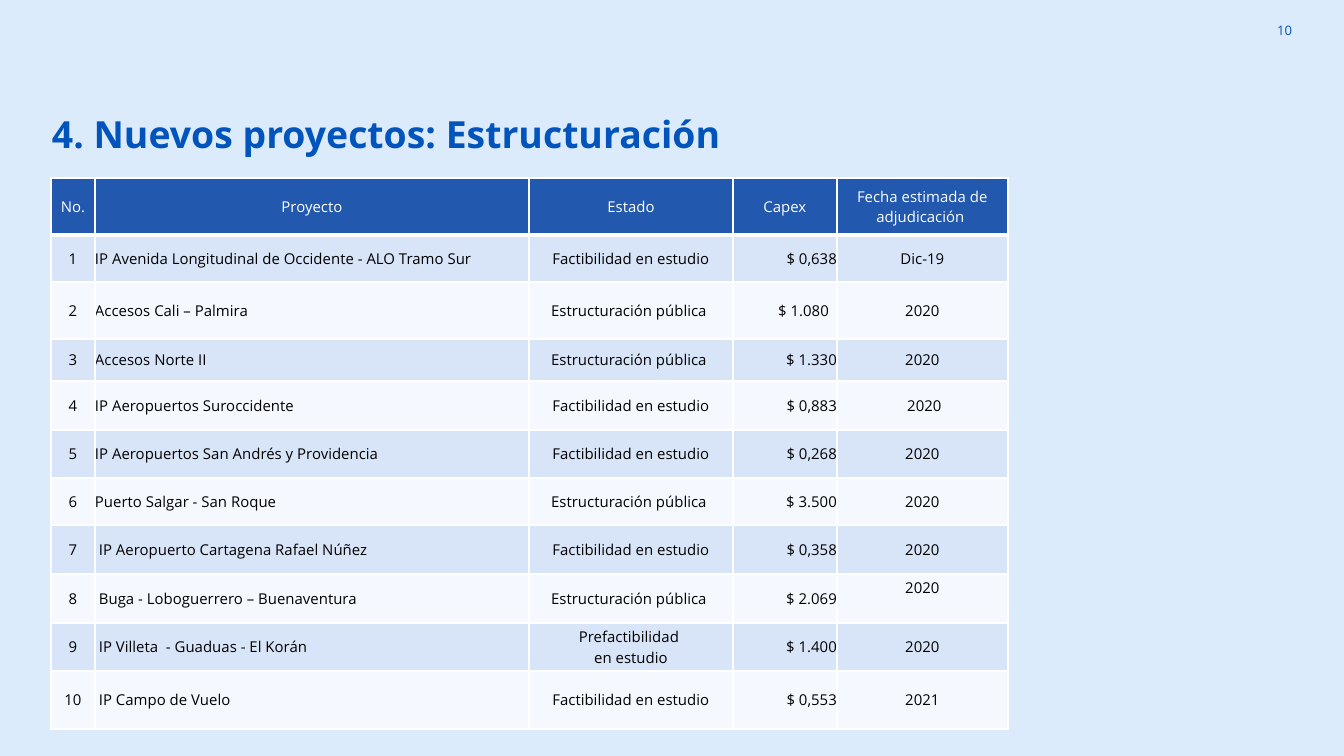
from pptx import Presentation
from pptx.dml.color import RGBColor
from pptx.enum.text import MSO_ANCHOR, PP_ALIGN
from pptx.oxml.ns import qn
from pptx.util import Pt
from lxml.etree import SubElement

# Content
TITLE = "4. Nuevos proyectos: Estructuración"
PAGE = "10"
HEAD = ("No.", "Proyecto", "Estado", "Capex", "Fecha estimada de adjudicación ")
STUDY = "Factibilidad en estudio"
PUBLIC = "Estructuración pública "
EARLY = "Prefactibilidad \nen estudio"
ROWS = [
    ("IP Avenida Longitudinal de Occidente - ALO Tramo Sur", STUDY, "$ 0,638", "Dic-19"),
    ("Accesos Cali – Palmira", PUBLIC, "$ 1.080", "2020"),
    ("Accesos Norte II", PUBLIC, "$ 1.330", "2020"),
    ("IP Aeropuertos Suroccidente", STUDY, "$ 0,883", " 2020"),
    ("IP Aeropuertos San Andrés y Providencia", STUDY, "$ 0,268", "2020"),
    ("Puerto Salgar - San Roque", PUBLIC, "$ 3.500", "2020"),
    (" IP Aeropuerto Cartagena Rafael Núñez", STUDY, "$ 0,358", "2020"),
    (" Buga - Loboguerrero – Buenaventura", PUBLIC, "$ 2.069", "2020"),
    (" IP Villeta  - Guaduas - El Korán", EARLY, "$ 1.400", "2020"),
    (" IP Campo de Vuelo", STUDY, "$ 0,553", "2021"),
]

# Format
COLORS = {"back": "DCEBFB", "title": "0054BC", "head": "2258AD", "odd": "D8E4F7",
          "even": "F5F8FF", "white": "FFFFFF", "black": "000000"}
FONT = "Open Sans"
LEFT, MID, RIGHT = PP_ALIGN.LEFT, PP_ALIGN.CENTER, PP_ALIGN.RIGHT
ALIGNS = (MID, LEFT, MID, RIGHT, MID)
WIDTHS = (44, 434, 204, 104, 171)
HEIGHTS = (57, 47, 57, 42, 49, 48, 47, 49, 49, 48, 58)
# Extra cell margins (left, top, right, bottom) by row and column
INSETS = {(2, 3): (0, 0, 8, 0), (8, 4): (0, 0, 0, 22)}


def px(n):
    return round(n * 914400 / 134.4)


def rgb(name):
    return RGBColor.from_string(COLORS[name])


def write(frame, text, size=8, color="black", bold=False, align=LEFT, spacing=None):
    frame.word_wrap = True
    for i, line in enumerate(text.split("\n")):
        para = frame.paragraphs[0] if i == 0 else frame.add_paragraph()
        para.alignment = align
        para.line_spacing = spacing
        run = para.add_run()
        run.text = line
        font = run.font
        font.name, font.size, font.bold = FONT, Pt(size), bold
        font.color.rgb = rgb(color)


def inset(item, left, top, right, bottom):
    item.margin_left, item.margin_top = px(left), px(top)
    item.margin_right, item.margin_bottom = px(right), px(bottom)
    item.vertical_anchor = MSO_ANCHOR.MIDDLE


def label(slide, place, text, margins, **style):
    frame = slide.shapes.add_textbox(*map(px, place)).text_frame
    inset(frame, *margins)
    write(frame, text, color="title", **style)


def border(cell, **sides):
    props = cell._tc.get_or_add_tcPr()
    for i, side in enumerate("LRTB"):
        line = SubElement(props, qn("a:ln" + side), w=str(Pt(sides.get(side, 1))))
        fill = SubElement(line, qn("a:solidFill"))
        SubElement(fill, qn("a:srgbClr"), val=COLORS["white"])
        props.insert(i, line)


# Slide
deck = Presentation()
deck.slide_width, deck.slide_height = px(1344), px(756)
slide = deck.slides.add_slide(deck.slide_layouts[6])
slide.background.fill.solid()
slide.background.fill.fore_color.rgb = rgb("back")

# Page number and title
label(slide, (1224, 1, 81, 58), PAGE, (13, 13, 13, 13), size=7, align=RIGHT)
label(slide, (9, 111, 983, 50), TITLE, (43, 5, 9, 5), size=20, bold=True, spacing=0.9)

# Project table
data = [HEAD] + [(str(n), *row) for n, row in enumerate(ROWS, 1)]
place = (51, 178, sum(WIDTHS), sum(HEIGHTS))
table = slide.shapes.add_table(len(data), len(HEAD), *map(px, place)).table
for col, width in zip(table.columns, WIDTHS):
    col.width = px(width)
for r, row in enumerate(data):
    table.rows[r].height = px(HEIGHTS[r])
    fill = "head" if r == 0 else "odd" if r % 2 else "even"
    for c, text in enumerate(row):
        cell = table.cell(r, c)
        inset(cell, *INSETS.get((r, c), (0, 0, 0, 0)))
        cell.fill.solid()
        cell.fill.fore_color.rgb = rgb(fill)
        border(cell, T=3 if r == 1 else 1, B=3 if r == 0 else 1)
        write(cell.text_frame, text, color="black" if r else "white",
              align=ALIGNS[c] if r else MID)

deck.save("out.pptx")
